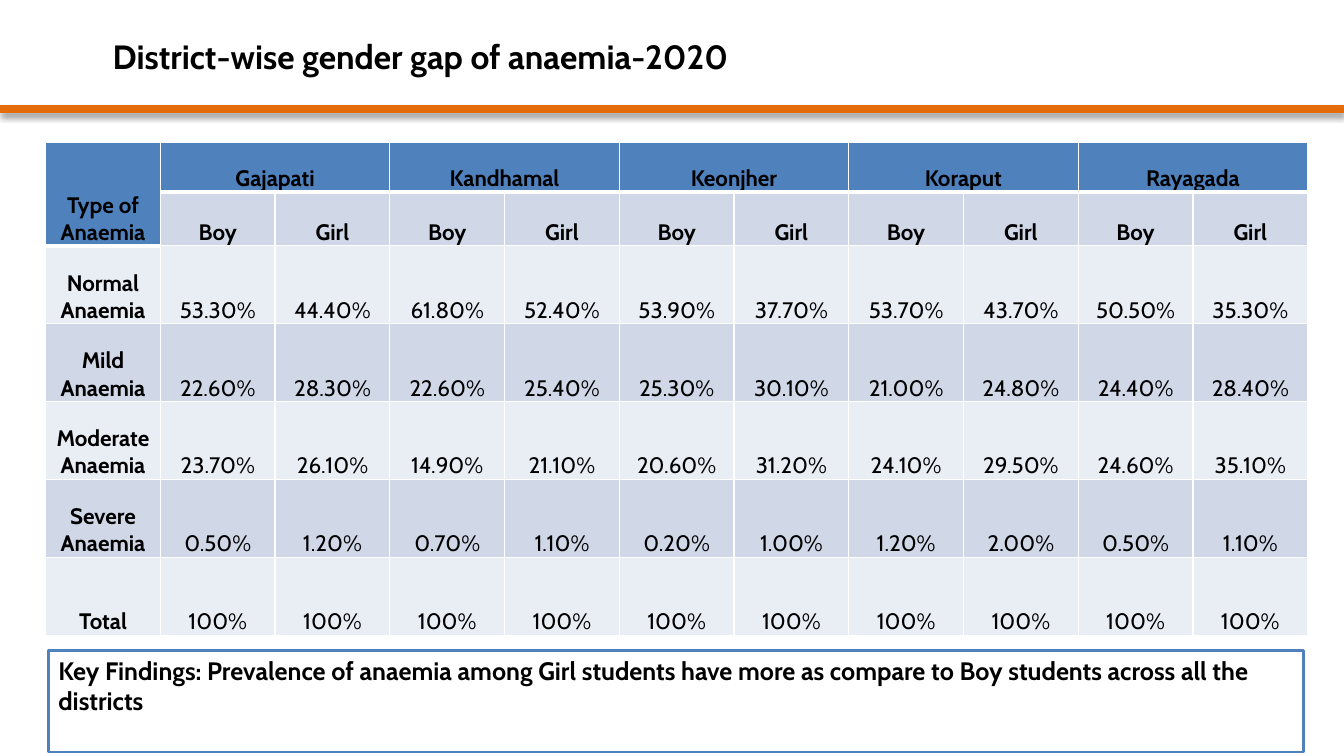
import pptx
import pptx.dml.color
import pptx.enum.shapes
import pptx.enum.text
import pptx.util
from lxml import etree

Pt = pptx.util.Pt
ANCHOR = pptx.enum.text.MSO_ANCHOR
ALIGN = pptx.enum.text.PP_ALIGN
COLORS = {
    "text": "000000", "white": "FFFFFF", "rule": "E46C0A",
    "header": "4F81BD", "dark band": "D0D8E8", "light band": "E9EDF4",
}
DRAWING = "http://schemas.openxmlformats.org/drawingml/2006/main"


def rgb(name):
    return pptx.dml.color.RGBColor.from_string(COLORS[name])


def write(frame, text, size, bold=True, align=ALIGN.LEFT):
    frame.word_wrap = True
    paragraph = frame.paragraphs[0]
    paragraph.alignment = align
    run = paragraph.add_run()
    run.text = text
    for name, value in {"name": "Cabin", "size": Pt(size), "bold": bold}.items():
        setattr(run.font, name, value)
    run.font.color.rgb = rgb("text")


presentation = pptx.Presentation()
presentation.slide_width, presentation.slide_height = Pt(960), Pt(540)
slide = presentation.slides.add_slide(presentation.slide_layouts[6])

# Orange rule with a soft shadow
rule = slide.shapes.add_connector(
    pptx.enum.shapes.MSO_CONNECTOR.STRAIGHT, Pt(0), Pt(77.8), Pt(960), Pt(77.8))
rule.line.color.rgb = rgb("rule")
rule.line.width = Pt(6)
rule.element.spPr.append(etree.fromstring(
    f'<a:effectLst xmlns:a="{DRAWING}">'
    f'<a:outerShdw blurRad="{Pt(4)}" dist="{Pt(3)}" dir="5400000" rotWithShape="0">'
    f'<a:srgbClr val="{COLORS["text"]}"><a:alpha val="40000"/></a:srgbClr>'
    '</a:outerShdw></a:effectLst>'))

# Title
title = slide.shapes.add_textbox(Pt(73.4), Pt(10), Pt(790), Pt(60))
title.text_frame.vertical_anchor = ANCHOR.MIDDLE
write(title.text_frame, "District-wise gender gap of anaemia-2020", 24)

# Table contents
districts = ["Gajapati", "Kandhamal", "Keonjher", "Koraput", "Rayagada"]
shares = {
    "Normal Anaemia": "53.30 44.40 61.80 52.40 53.90 37.70 53.70 43.70 50.50 35.30",
    "Mild Anaemia": "22.60 28.30 22.60 25.40 25.30 30.10 21.00 24.80 24.40 28.40",
    "Moderate Anaemia": "23.70 26.10 14.90 21.10 20.60 31.20 24.10 29.50 24.60 35.10",
    "Severe Anaemia": "0.50 1.20 0.70 1.10 0.20 1.00 1.20 2.00 0.50 1.10",
    "Total": " ".join(["100"] * 10),
}
rows = [["Type of Anaemia"], [""] + ["Boy", "Girl"] * len(districts)]
for district in districts:
    rows[0] += [district, ""]
for kind, values in shares.items():
    rows.append([kind] + [f"{value}%" for value in values.split()])

# Table grid and merged headers
row_heights = [35.3, 31.7] + [55.7] * len(shares)
table = slide.shapes.add_table(
    len(rows), len(rows[0]), Pt(32.6), Pt(101.8), Pt(901.45), Pt(sum(row_heights))).table
for column in table.columns:
    column.width = Pt(81.95)
for row, height in zip(table.rows, row_heights):
    row.height = Pt(height)
table.cell(0, 0).merge(table.cell(1, 0))
for left in range(1, len(rows[0]), 2):
    table.cell(0, left).merge(table.cell(0, left + 1))

# Table cells
for row_index, row in enumerate(rows):
    for column_index, text in enumerate(row):
        cell = table.cell(row_index, column_index)
        header_depth = 2 if column_index == 0 else 1
        is_header = row_index < header_depth
        borders = {"L": 1, "R": 1, "T": 3 if row_index == header_depth else 1,
                   "B": 3 if is_header else 1}
        properties = cell._tc.get_or_add_tcPr()
        for side, width in borders.items():
            properties.append(etree.fromstring(
                f'<a:ln{side} xmlns:a="{DRAWING}" w="{Pt(width)}"><a:solidFill>'
                f'<a:srgbClr val="{COLORS["white"]}"/></a:solidFill></a:ln{side}>'))
        band = "dark band" if row_index % 2 else "light band"
        cell.fill.solid()
        cell.fill.fore_color.rgb = rgb("header" if is_header else band)
        for side in ("left", "right", "top", "bottom"):
            setattr(cell, f"margin_{side}", Pt(0))
        cell.vertical_anchor = ANCHOR.BOTTOM
        if text:
            bold = row_index < 2 or column_index == 0
            write(cell.text_frame, text, 16, bold, ALIGN.CENTER)

# Key findings box
findings = slide.shapes.add_shape(
    pptx.enum.shapes.MSO_SHAPE.RECTANGLE, Pt(34.6), Pt(464.4), Pt(896.4), Pt(72.7))
findings.shadow.inherit = False
findings.fill.solid()
findings.fill.fore_color.rgb = rgb("white")
findings.line.color.rgb = rgb("header")
findings.line.width = Pt(2)
findings.text_frame.vertical_anchor = ANCHOR.TOP
write(findings.text_frame,
      "Key Findings: Prevalence of anaemia among Girl students have more "
      "as compare to Boy students across all the districts", 18)

presentation.save("out.pptx")
